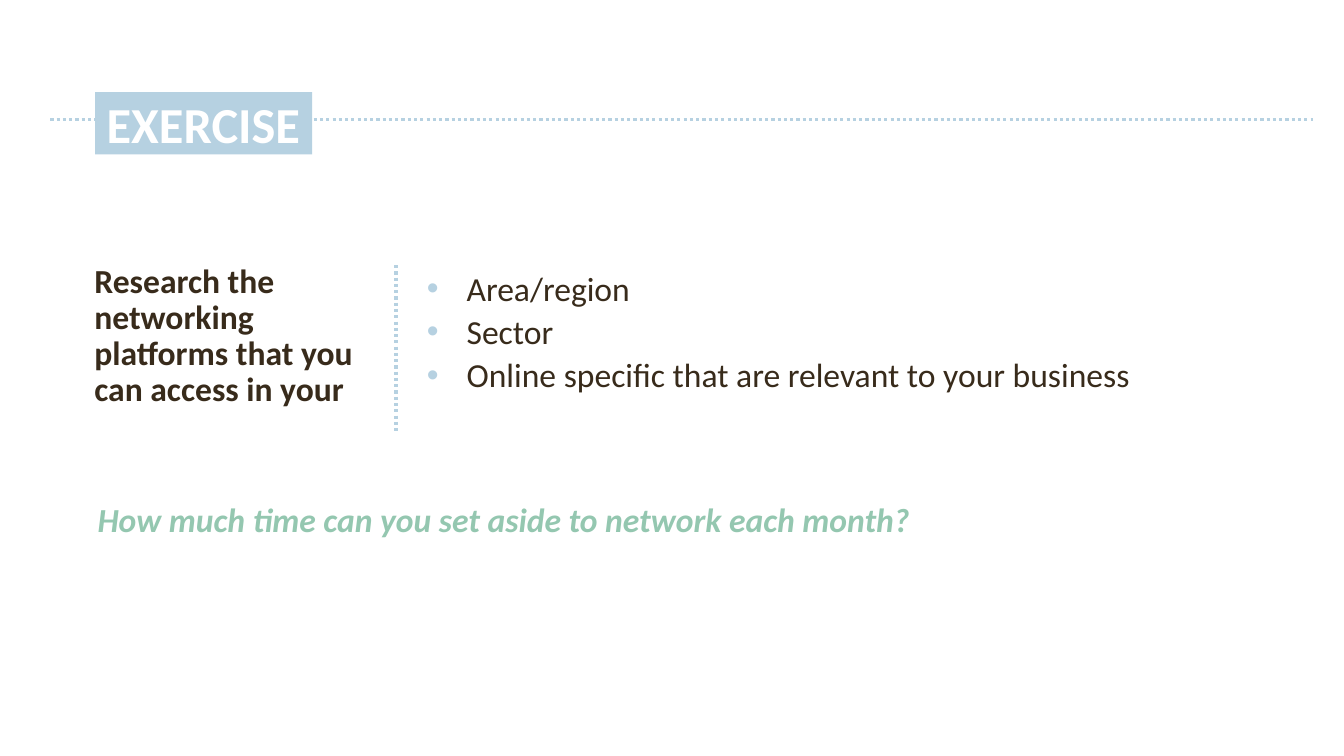
from dataclasses import dataclass

from lxml import etree
from pptx import Presentation
from pptx.dml.color import RGBColor
from pptx.enum.dml import MSO_LINE
from pptx.enum.shapes import MSO_CONNECTOR, MSO_SHAPE
from pptx.enum.text import MSO_ANCHOR, PP_ALIGN
from pptx.oxml.ns import qn
from pptx.util import Cm, Pt

DOTTED = MSO_LINE.ROUND_DOT
STRAIGHT = MSO_CONNECTOR.STRAIGHT
RECTANGLE = MSO_SHAPE.RECTANGLE
TOP, MIDDLE = MSO_ANCHOR.TOP, MSO_ANCHOR.MIDDLE
LEFT = PP_ALIGN.LEFT


@dataclass(frozen=True)
class Theme:
    font: str = "Calibri"
    accent: str = "B6D1E1"
    text: str = "382B1B"
    question: str = "94C7B0"
    white: str = "FFFFFF"
    title_size: int = 36
    body_size: int = 24
    line_width: float = 2.25
    line_spacing: float = 0.9
    space_before: int = 5
    bullet_indent: float = 1.0


@dataclass(frozen=True)
class Box:
    left: float
    top: float
    width: float
    height: float

    def lengths(self):
        return [Cm(n) for n in (self.left, self.top, self.width, self.height)]


THEME = Theme()


def set_values(target, values):
    for name, value in values.items():
        setattr(target, name, value)


def set_font(paragraph, size, color, **styles):
    set_values(paragraph.font, {"name": THEME.font, "size": Pt(size), **styles})
    paragraph.font.color.rgb = RGBColor.from_string(color)


def add_bullet(paragraph):
    properties = paragraph._p.get_or_add_pPr()
    indent = Cm(THEME.bullet_indent)
    properties.set("marL", str(indent))
    properties.set("indent", str(-indent))
    bullet_color = etree.SubElement(properties, qn("a:buClr"))
    etree.SubElement(bullet_color, qn("a:srgbClr"), val=THEME.accent)
    etree.SubElement(properties, qn("a:buFont"), typeface="Arial")
    etree.SubElement(properties, qn("a:buChar"), char="•")


def add_dotted_line(slide, start, end):
    ends = [Cm(n) for n in (*start, *end)]
    connector = slide.shapes.add_connector(STRAIGHT, *ends)
    set_values(connector.line, {"width": Pt(THEME.line_width), "dash_style": DOTTED})
    connector.line.color.rgb = RGBColor.from_string(THEME.accent)
    etree.SubElement(connector._element.spPr, qn("a:effectLst"))


def add_text(slide, box, lines, color, bulleted=False, **styles):
    frame = slide.shapes.add_textbox(*box.lengths()).text_frame
    set_values(frame, {"word_wrap": True, "vertical_anchor": TOP})
    for index, line in enumerate(lines):
        paragraph = frame.add_paragraph() if index else frame.paragraphs[0]
        paragraph.text = line
        if bulleted:
            add_bullet(paragraph)
        space_before = Pt(THEME.space_before if index else 0)
        set_values(paragraph, {"line_spacing": THEME.line_spacing, "space_before": space_before})
        set_font(paragraph, THEME.body_size, color, **styles)


def add_heading(slide, box, title):
    line_top = box.top + 0.7
    add_dotted_line(slide, (box.left, line_top), (box.left + box.width, line_top))
    label_box = Box(box.left + 1.13, box.top, 5.47, box.height)
    label = slide.shapes.add_shape(RECTANGLE, *label_box.lengths())
    label.shadow.inherit = False
    label.fill.solid()
    label.fill.fore_color.rgb = RGBColor.from_string(THEME.accent)
    label.line.fill.background()
    set_values(label.text_frame, {
        "word_wrap": False, "vertical_anchor": MIDDLE, "margin_left": Cm(0.29),
        "margin_right": 0, "margin_top": 0, "margin_bottom": 0,
    })
    paragraph = label.text_frame.paragraphs[0]
    set_values(paragraph, {"text": title, "alignment": LEFT})
    set_font(paragraph, THEME.title_size, THEME.white, bold=True)


def add_research_task(slide, box, task, topics):
    divider_left = box.left + 7.85
    topics_left = box.left + 8.38
    task_box = Box(box.left, box.top, 8.03, box.height)
    topics_box = Box(topics_left, box.top + 0.2, box.left + box.width - topics_left, box.height)
    add_text(slide, task_box, [task], THEME.text, bold=True)
    add_text(slide, topics_box, topics, THEME.text, bulleted=True)
    add_dotted_line(slide, (divider_left, box.top + 0.15), (divider_left, box.top + 4.35))


def add_question(slide, box, question):
    add_text(slide, box, [question], THEME.question, bold=True, italic=True)


def main():
    presentation = Presentation()
    set_values(presentation, {"slide_width": Cm(33.87), "slide_height": Cm(19.05)})
    slide = presentation.slides.add_slide(presentation.slide_layouts[6])
    add_heading(slide, Box(1.27, 2.32, 31.83, 1.57), "EXERCISE")
    add_research_task(
        slide,
        Box(2.13, 6.53, 29.52, 7.3),
        "Research the networking platforms that you can access in your",
        ["Area/region", "Sector", "Online specific that are relevant to your business"],
    )
    add_question(
        slide,
        Box(2.21, 12.57, 22.56, 2.72),
        "How much time can you set aside to network each month?",
    )
    presentation.save("out.pptx")


if __name__ == "__main__":
    main()
